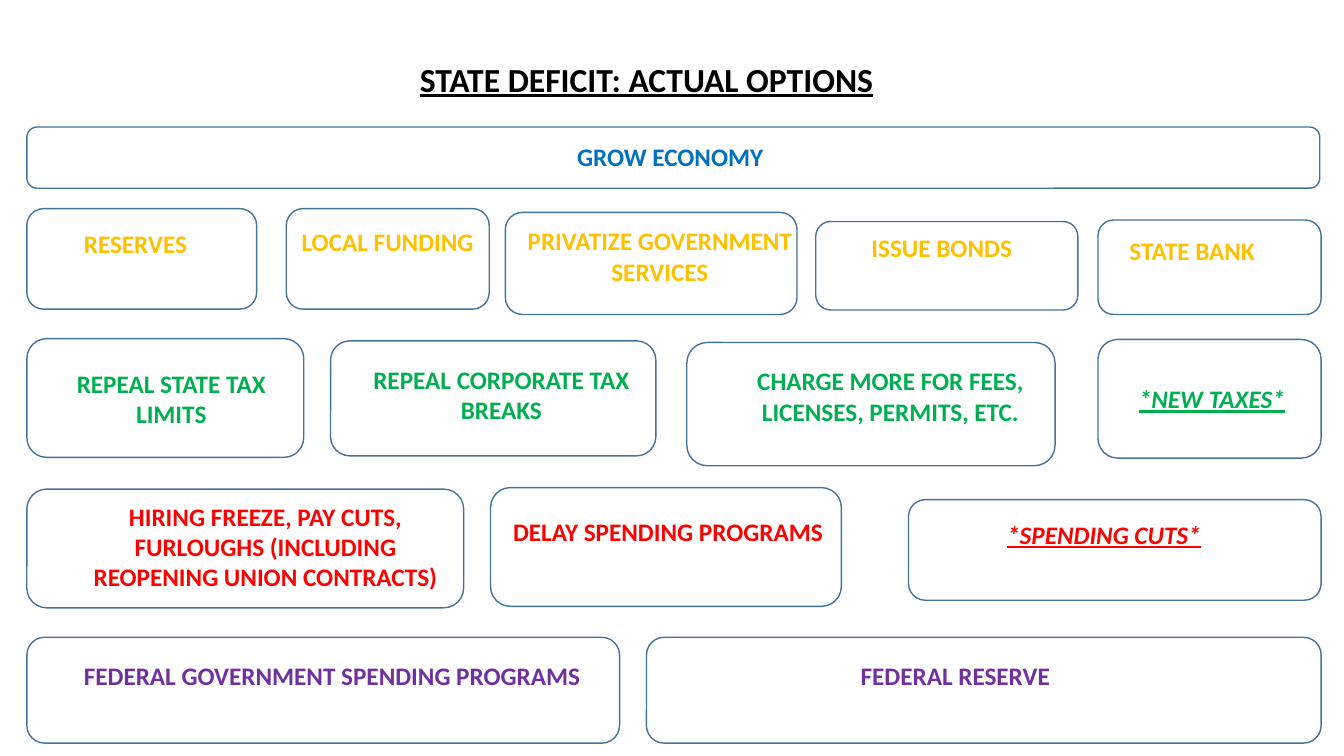
from pptx import Presentation, util as u
from pptx.dml.color import RGBColor
from pptx.enum import shapes, text

deck = Presentation()
deck.slide_width, deck.slide_height = u.Inches(13.33), u.Inches(7.5)
slide = deck.slides.add_slide(deck.slide_layouts[6])

# Lengths are percent of the slide's width and height
COL, ROW = deck.slide_width / 100, deck.slide_height / 100
LINE = 4.05
LEFT, MID = text.PP_ALIGN.LEFT, text.PP_ALIGN.CENTER


def paint(code):
    return RGBColor.from_string(code)


def label(words, x, y, wide, hue, size=18, lines=1, align=LEFT, under=False, slant=False):
    high = 1.3 + lines * LINE * size / 18
    box = slide.shapes.add_textbox(*map(int, (x * COL, y * ROW, wide * COL, high * ROW)))
    box.text_frame.word_wrap = True
    par = box.text_frame.paragraphs[0]
    par.text, par.alignment = words, align
    font = par.font
    font.name, font.size, font.bold = "Calibri", u.Pt(size), True
    font.underline, font.italic = under, slant
    font.color.rgb = paint(hue)


# Title
label("STATE DEFICIT: ACTUAL OPTIONS", 30.5, 7.1, 45.9, "000000", size=24, under=True)

# Tiers by colour: frame (x, y, width, height), words, label (x, y, width), lines if centred
tiers = {
    "0070C0": [
        ((2, 16.8, 96.2, 8.1), "GROW ECONOMY", (42.2, 18, 17.9), 0),
    ],
    "FFC000": [
        ((2, 27.6, 17.1, 13.3), "RESERVES", (5.5, 29.6, 17.6), 0),
        ((21.3, 27.6, 15.1, 13.3), "LOCAL FUNDING", (21.7, 29.3, 15.8), 0),
        ((37.6, 28.1, 21.7, 13.5), "PRIVATIZE GOVERNMENT SERVICES", (37.9, 29.2, 22.4), 2),
        ((60.7, 29.3, 19.5, 11.7), "ISSUE BONDS", (64.1, 30.1, 24.6), 0),
        ((81.7, 29.1, 16.6, 12.5), "STATE BANK", (83.3, 30.5, 15), 0),
    ],
    "00B050": [
        ((2, 44.8, 20.6, 15.7), "REPEAL STATE TAX LIMITS", (2.9, 48, 19.7), 2),
        ((24.6, 45.1, 24.2, 15.2), "REPEAL CORPORATE TAX BREAKS", (25.7, 47.5, 23.2), 2),
        ((51.1, 45.3, 27.4, 16.3), "CHARGE MORE FOR FEES, LICENSES, PERMITS, ETC.",
         (53.9, 47.7, 24.7), 2),
        ((81.7, 44.9, 16.6, 15.7), "*NEW TAXES*", (84, 50.1, 16), 0),
    ],
    "FF0000": [
        ((2, 64.7, 32.5, 15.7),
         "HIRING FREEZE, PAY CUTS, FURLOUGHS (INCLUDING REOPENING UNION CONTRACTS)",
         (4.6, 65.6, 30.3), 3),
        ((36.5, 64.5, 26.1, 15.7), "DELAY SPENDING PROGRAMS", (37.2, 67.7, 25), 1),
        ((67.6, 66.1, 30.7, 13.3), "*SPENDING CUTS*", (74.2, 68, 18.3), 0),
    ],
    "7030A0": [
        ((2, 84.3, 44.1, 14), "FEDERAL GOVERNMENT SPENDING PROGRAMS", (5.5, 86.7, 38.8), 0),
        ((48.1, 84.3, 50.2, 14), "FEDERAL RESERVE", (63.3, 86.7, 20.9), 0),
    ],
}

# Frames with their labels; starred options are underlined italics
for hue, cards in tiers.items():
    for (x, y, wide, high), words, spot, lines in cards:
        frame = slide.shapes.add_shape(
            shapes.MSO_SHAPE.ROUNDED_RECTANGLE,
            *map(int, (x * COL, y * ROW, wide * COL, high * ROW)))
        frame.shadow.inherit = False
        frame.fill.background()
        frame.line.color.rgb = paint("43739E")
        frame.line.width = u.Pt(1)
        star = words.startswith("*")
        label(words, *spot, hue, lines=max(lines, 1),
              align=MID if lines else LEFT, under=star, slant=star)

deck.save("out.pptx")
